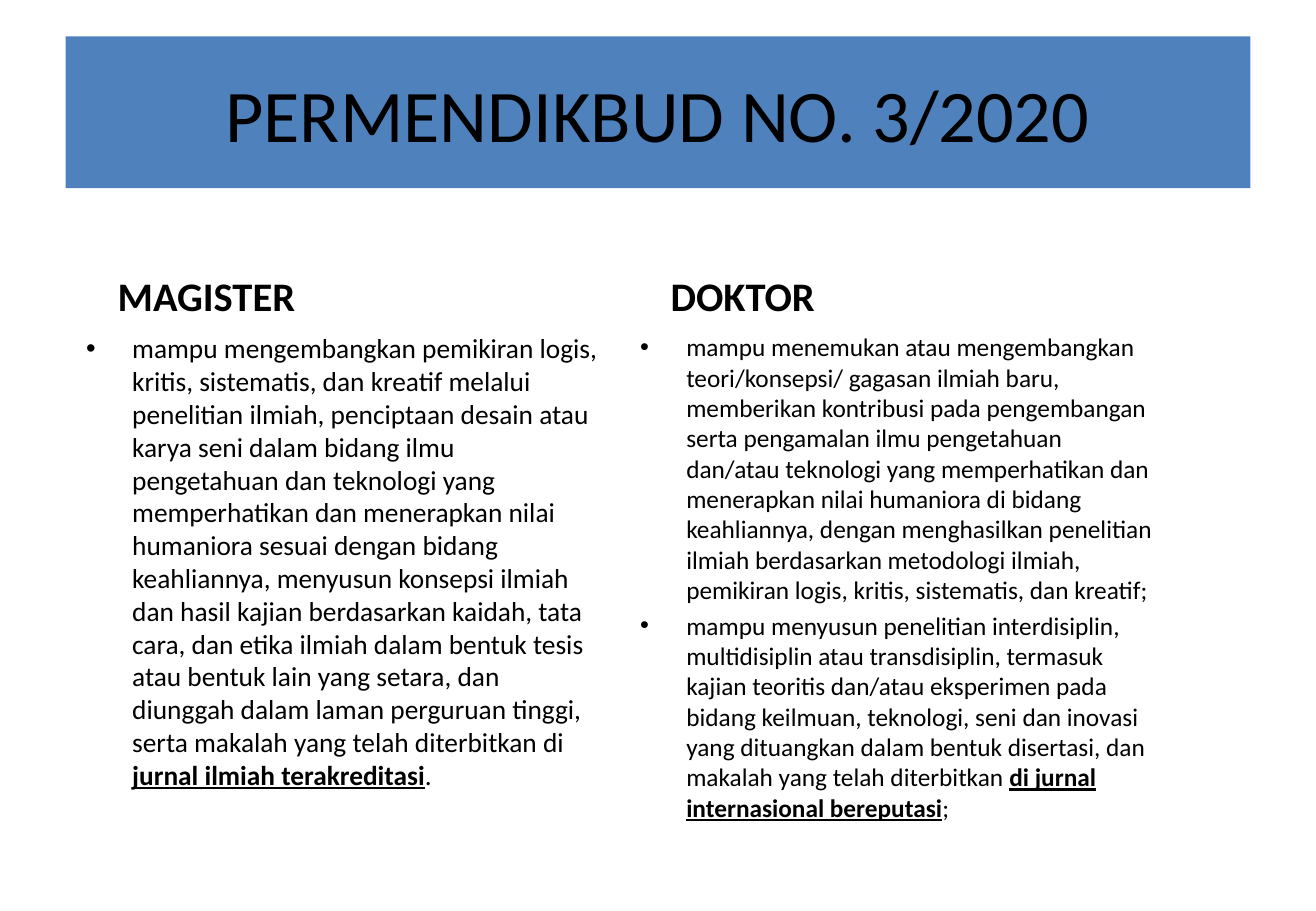
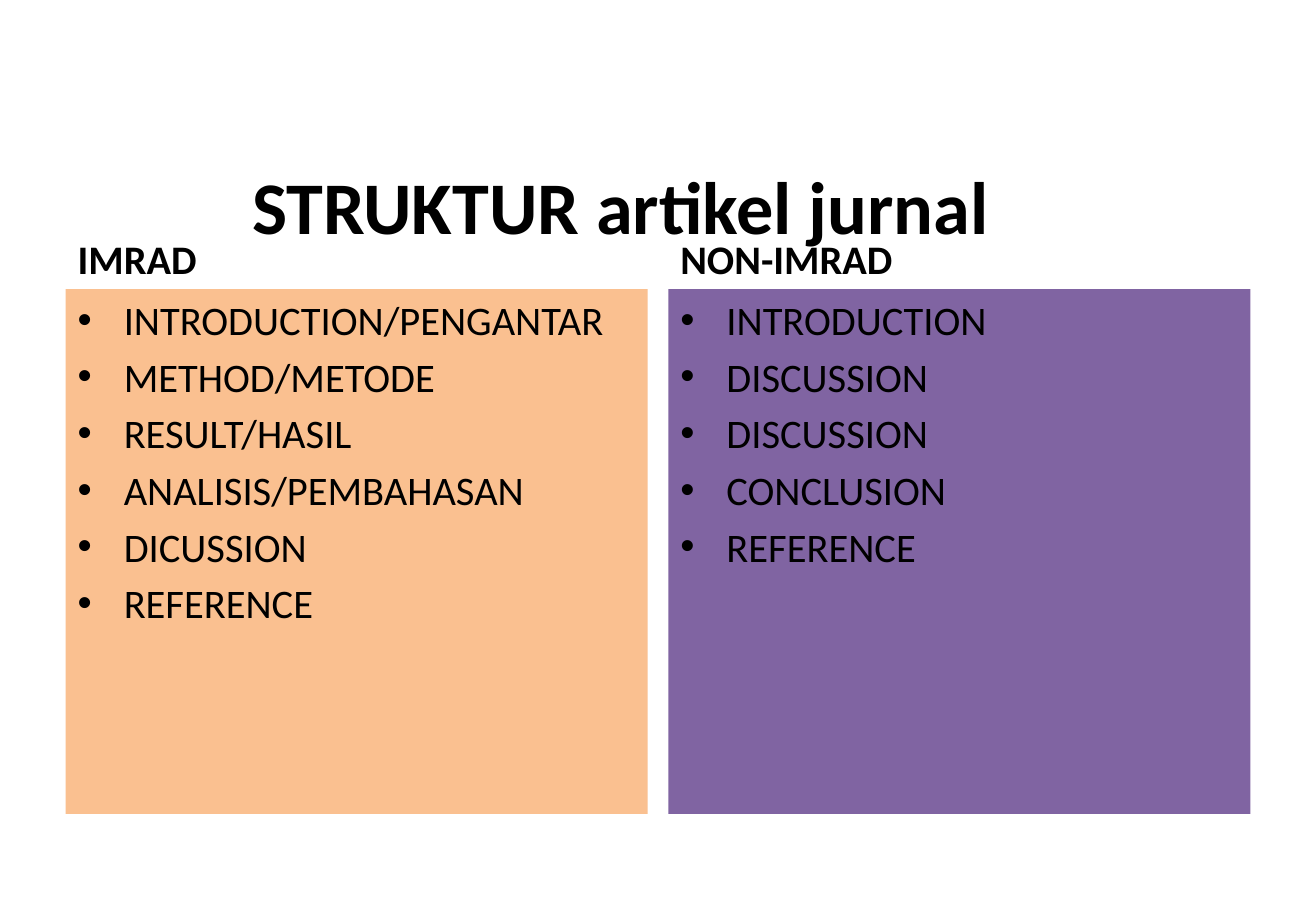
from dataclasses import dataclass
from typing import Optional

from lxml.etree import SubElement
from pptx import Presentation
from pptx.dml.color import RGBColor
from pptx.enum.text import MSO_ANCHOR, PP_ALIGN
from pptx.oxml.ns import qn
from pptx.util import Inches, Pt

COLORS = {
    "text": "000000",
    "white": "FFFFFF",
    "band": "4F81BD",
    "orange": "FAC090",
    "purple": "8064A2",
}
FONT = "Calibri"
TITLE_SIZE = 44
HEADING_SIZE = 24
SPACE_BEFORE = 0.2
BULLET_INDENT = Inches(0.38)


@dataclass(frozen=True)
class Box:
    left: float
    top: float
    width: float
    height: float


@dataclass(frozen=True)
class Run:
    text: str
    strong: bool = False


@dataclass(frozen=True)
class Style:
    size: float
    bold: bool = False
    bullet: bool = False
    align: PP_ALIGN = PP_ALIGN.LEFT
    anchor: MSO_ANCHOR = MSO_ANCHOR.TOP
    spaced: bool = True


@dataclass(frozen=True)
class Column:
    heading: str
    heading_box: Box
    body_box: Box
    body_size: float
    items: tuple[tuple[Run, ...], ...]
    fill: Optional[str] = None


@dataclass(frozen=True)
class Page:
    title: str
    title_box: Box
    columns: tuple[Column, ...]
    title_fill: Optional[str] = None
    title_bold: bool = False


def add_bullet(paragraph) -> None:
    properties = paragraph._p.get_or_add_pPr()
    properties.set("marL", str(BULLET_INDENT))
    properties.set("indent", str(-BULLET_INDENT))
    SubElement(properties, qn("a:buFont")).set("typeface", "Arial")
    SubElement(properties, qn("a:buChar")).set("char", "•")


def add_text(slide, box: Box, items: tuple[tuple[Run, ...], ...],
             style: Style, fill: Optional[str] = None) -> None:
    shape = slide.shapes.add_textbox(Inches(box.left), Inches(box.top),
                                     Inches(box.width), Inches(box.height))
    if fill:
        shape.fill.solid()
        shape.fill.fore_color.rgb = RGBColor.from_string(COLORS[fill])
    frame = shape.text_frame
    frame.word_wrap = True
    frame.vertical_anchor = style.anchor
    for index, item in enumerate(items):
        paragraph = frame.add_paragraph() if index else frame.paragraphs[0]
        paragraph.alignment = style.align
        if style.spaced:
            paragraph.space_before = Pt(style.size * SPACE_BEFORE)
        if style.bullet:
            add_bullet(paragraph)
        for part in item:
            run = paragraph.add_run()
            run.text = part.text
            run.font.name = FONT
            run.font.size = Pt(style.size)
            run.font.bold = style.bold or part.strong
            run.font.underline = part.strong
            run.font.color.rgb = RGBColor.from_string(COLORS["text"])


def add_page(presentation, page: Page) -> None:
    slide = presentation.slides.add_slide(presentation.slide_layouts[6])
    title_style = Style(TITLE_SIZE, page.title_bold, align=PP_ALIGN.CENTER,
                        anchor=MSO_ANCHOR.MIDDLE, spaced=False)
    heading_style = Style(HEADING_SIZE, bold=True, anchor=MSO_ANCHOR.BOTTOM)
    add_text(slide, page.title_box, ((Run(page.title),),), title_style, page.title_fill)
    for column in page.columns:
        add_text(slide, column.heading_box, ((Run(column.heading),),), heading_style)
        add_text(slide, column.body_box, column.items,
                 Style(column.body_size, bullet=True), column.fill)


def structure_column(heading: str, left: float, fill: str, *items: str) -> Column:
    return Column(heading, Box(left, 1.68, 4.79, 0.7), Box(left, 2.38, 4.79, 4.32),
                  24, tuple((Run(item),) for item in items), fill)


REGULATION = Page(
    "PERMENDIKBUD NO. 3/2020",
    Box(0.54, 0.3, 9.75, 1.25),
    (
        Column(
            "MAGISTER", Box(0.87, 2.11, 4.18, 0.57), Box(0.61, 2.68, 4.44, 3.74), 16.2,
            ((
                Run("mampu mengembangkan pemikiran logis, kritis, sistematis, dan "
                    "kreatif melalui penelitian ilmiah, penciptaan desain atau karya "
                    "seni dalam bidang ilmu pengetahuan dan teknologi yang "
                    "memperhatikan dan menerapkan nilai humaniora sesuai dengan "
                    "bidang keahliannya, menyusun konsepsi ilmiah dan hasil kajian "
                    "berdasarkan kaidah, tata cara, dan etika ilmiah dalam bentuk "
                    "tesis atau bentuk lain yang setara, dan diunggah dalam laman "
                    "perguruan tinggi, serta makalah yang telah diterbitkan di "),
                Run("jurnal ilmiah terakreditasi", True),
                Run("."),
            ),),
            "white",
        ),
        Column(
            "DOKTOR", Box(5.42, 2.11, 4.2, 0.57), Box(5.17, 2.68, 4.44, 3.86), 15,
            (
                (
                    Run("mampu menemukan atau mengembangkan teori/konsepsi/ gagasan "
                        "ilmiah baru, memberikan kontribusi pada pengembangan serta "
                        "pengamalan ilmu pengetahuan dan/atau teknologi yang "
                        "memperhatikan dan menerapkan nilai humaniora di bidang "
                        "keahliannya, dengan menghasilkan penelitian ilmiah "
                        "berdasarkan metodologi ilmiah, pemikiran logis, kritis, "
                        "sistematis, dan kreatif;"),
                ),
                (
                    Run("mampu menyusun penelitian interdisiplin, multidisiplin atau "
                        "transdisiplin, termasuk kajian teoritis dan/atau eksperimen "
                        "pada bidang keilmuan, teknologi, seni dan inovasi yang "
                        "dituangkan dalam bentuk disertasi, dan makalah yang telah "
                        "diterbitkan "),
                    Run("di jurnal internasional bereputasi", True),
                    Run(";"),
                ),
            ),
        ),
    ),
    title_fill="band",
)

STRUCTURE = Page(
    "STRUKTUR artikel jurnal",
    Box(0.61, 1.24, 9, 0.89),
    (
        structure_column("IMRAD", 0.54, "orange", "INTRODUCTION/PENGANTAR",
                         "METHOD/METODE", "RESULT/HASIL", "ANALISIS/PEMBAHASAN",
                         "DICUSSION", "REFERENCE"),
        structure_column("NON-IMRAD", 5.5, "purple", "INTRODUCTION", "DISCUSSION",
                         "DISCUSSION", "CONCLUSION", "REFERENCE"),
    ),
    title_bold=True,
)


def main() -> None:
    presentation = Presentation()
    presentation.slide_width = Inches(10.83)
    presentation.slide_height = Inches(7.5)
    for page in (REGULATION, STRUCTURE):
        add_page(presentation, page)
    presentation.save("out.pptx")


if __name__ == "__main__":
    main()
